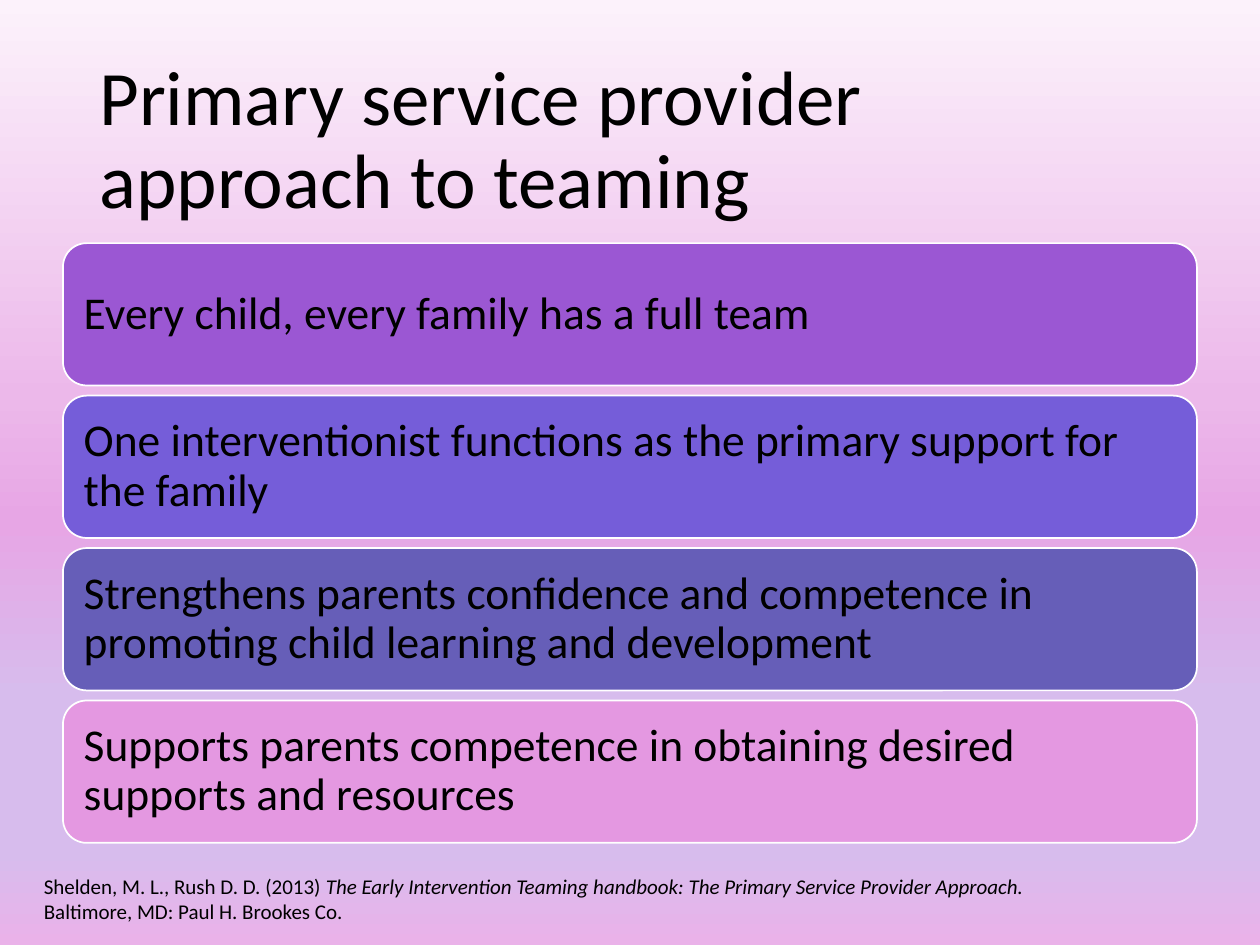
from lxml.etree import SubElement
from pptx import Presentation
from pptx.dml.color import RGBColor
from pptx.enum.shapes import MSO_SHAPE
from pptx.enum.text import MSO_ANCHOR, PP_ALIGN
from pptx.oxml.ns import qn
from pptx.util import Inches, Pt

FONT = "Calibri"
BLACK = RGBColor(0x00, 0x00, 0x00)
WHITE = RGBColor(0xFF, 0xFF, 0xFF)
BACKGROUND_STOPS = [
    (0, RGBColor(0xFC, 0xF2, 0xFB)),
    (42, RGBColor(0xEC, 0xB8, 0xEA)),
    (55, RGBColor(0xE7, 0xA6, 0xE5)),
    (74, RGBColor(0xD7, 0xBC, 0xED)),
    (90, RGBColor(0xD7, 0xBC, 0xED)),
    (100, RGBColor(0xEA, 0xB2, 0xE9)),
]
PRINCIPLES = [
    ("Every child, every family has a full team", RGBColor(0x9B, 0x57, 0xD3)),
    ("One interventionist functions as the primary support for the family",
     RGBColor(0x75, 0x5D, 0xD9)),
    ("Strengthens parents confidence and competence in promoting child learning and development",
     RGBColor(0x66, 0x5E, 0xB8)),
    ("Supports parents competence in obtaining desired supports and resources",
     RGBColor(0xE4, 0x98, 0xE1)),
]
BAR_TOP, BAR_HEIGHT, BAR_PITCH = 1.93, 1.13, 1.21


def paint_background(slide):
    """Fill the background with a top-to-bottom gradient of several stops."""
    fill = slide.background.fill
    fill.gradient()
    fill.gradient_angle = 270
    stop_list = slide.element.find(".//" + qn("a:gsLst"))
    for stop in list(stop_list):
        stop_list.remove(stop)
    for percent, color in BACKGROUND_STOPS:
        stop = SubElement(stop_list, qn("a:gs"), pos=str(percent * 1000))
        SubElement(stop, qn("a:srgbClr"), val=str(color))


def style_font(font, size):
    font.name = FONT
    font.size = Pt(size)
    font.color.rgb = BLACK


def write_heading(frame, text, size):
    """Write one left-aligned, vertically centred paragraph with tight lines."""
    frame.word_wrap = True
    frame.vertical_anchor = MSO_ANCHOR.MIDDLE
    frame.text = text
    paragraph = frame.paragraphs[0]
    paragraph.alignment = PP_ALIGN.LEFT
    paragraph.line_spacing = 0.9
    style_font(paragraph.runs[0].font, size)


def add_title(slide, text):
    title = slide.shapes.add_textbox(Inches(0.69), Inches(0.4), Inches(8.62), Inches(1.45))
    write_heading(title.text_frame, text, 44)


def add_bar(slide, top, text, color):
    bar = slide.shapes.add_shape(
        MSO_SHAPE.ROUNDED_RECTANGLE, Inches(0.5), Inches(top), Inches(9), Inches(BAR_HEIGHT))
    bar.shadow.inherit = False
    bar.fill.solid()
    bar.fill.fore_color.rgb = color
    bar.line.color.rgb = WHITE
    bar.line.width = Pt(1)
    frame = bar.text_frame
    frame.margin_left = frame.margin_right = Inches(0.11)
    frame.margin_top = frame.margin_bottom = Inches(0.11)
    write_heading(frame, text, 26)


def add_citation(slide, lines):
    """Add lines of (text, italic) pieces at the foot of the slide."""
    citation = slide.shapes.add_textbox(Inches(0.25), Inches(6.88), Inches(9.5), Inches(0.5))
    frame = citation.text_frame
    frame.word_wrap = True
    for index, pieces in enumerate(lines):
        paragraph = frame.add_paragraph() if index else frame.paragraphs[0]
        for text, italic in pieces:
            run = paragraph.add_run()
            run.text = text
            style_font(run.font, 12)
            run.font.italic = italic


def main():
    prs = Presentation()
    prs.slide_width, prs.slide_height = Inches(10), Inches(7.5)
    slide = prs.slides.add_slide(prs.slide_layouts[6])
    paint_background(slide)
    add_title(slide, "Primary service provider approach to teaming")
    for row, (text, color) in enumerate(PRINCIPLES):
        add_bar(slide, BAR_TOP + row * BAR_PITCH, text, color)
    add_citation(slide, [
        [("Shelden, M. L., Rush D. D. (2013) ", False),
         ("The Early Intervention Teaming handbook: The Primary Service Provider Approach.", True)],
        [("Baltimore, MD: Paul H. Brookes Co.", False)],
    ])
    prs.save("out.pptx")


if __name__ == "__main__":
    main()
